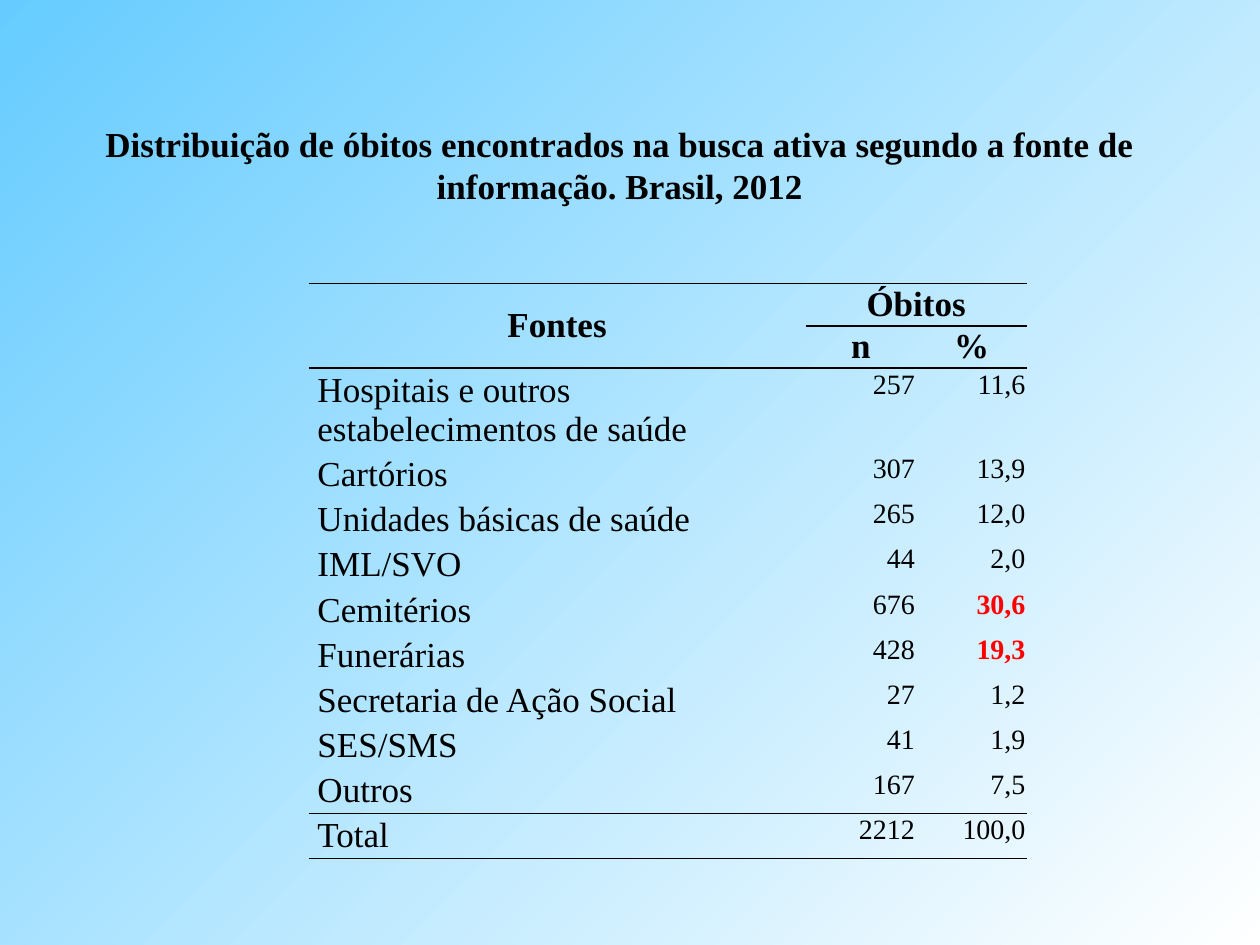
from lxml import etree
from pptx import Presentation
from pptx.dml.color import RGBColor
from pptx.enum.text import MSO_ANCHOR, PP_ALIGN
from pptx.oxml.ns import qn
from pptx.util import Cm, Pt

COLORS = {"sky": "66CCFF", "white": "FFFFFF", "ink": "000000", "highlight": "FF0000"}
FONT = "Times New Roman"
SOURCES = [
    ("Hospitais e outros estabelecimentos de saúde", "257", "11,6"),
    ("Cartórios", "307", "13,9"),
    ("Unidades básicas de saúde", "265", "12,0"),
    ("IML/SVO", "44", "2,0"),
    ("Cemitérios", "676", "30,6"),
    ("Funerárias", "428", "19,3"),
    ("Secretaria de Ação Social", "27", "1,2"),
    ("SES/SMS", "41", "1,9"),
    ("Outros", "167", "7,5"),
    ("Total", "2212", "100,0"),
]
HIGHLIGHTED = {"30,6", "19,3"}
ROWS = [("Fontes", "Óbitos", ""), ("", "n", "%")] + SOURCES
HEADER_ROWS = 2


def write(frame, text, size, align, bold=False, color="ink"):
    paragraph = frame.paragraphs[0]
    paragraph.alignment = align
    run = paragraph.add_run()
    run.text = text
    run.font.name = FONT
    run.font.size = Pt(size)
    run.font.bold = bold
    run.font.color.rgb = RGBColor.from_string(COLORS[color])


def set_borders(cell, ruled_sides):
    """Draw a 1 pt line on the given sides (of L, R, T, B) and clear the others."""
    properties = cell._tc.get_or_add_tcPr()
    for position, side in enumerate("LRTB"):
        line = etree.Element(qn(f"a:ln{side}"), w=str(Pt(1)))
        if side in ruled_sides:
            fill = etree.SubElement(line, qn("a:solidFill"))
            etree.SubElement(fill, qn("a:srgbClr"), val=COLORS["ink"])
        else:
            etree.SubElement(line, qn("a:noFill"))
        properties.insert(position, line)


prs = Presentation()
prs.slide_width, prs.slide_height = Cm(25.4), Cm(19.05)
slide = prs.slides.add_slide(prs.slide_layouts[6])

background = slide.background.fill
background.gradient()
background.gradient_angle = 315
for stop, name in zip(background.gradient_stops, ("sky", "white")):
    stop.color.rgb = RGBColor.from_string(COLORS[name])

title = slide.shapes.add_textbox(Cm(0.1), Cm(2.34), Cm(24.79), Cm(1.96)).text_frame
title.word_wrap = True
write(title, "Distribuição de óbitos encontrados na busca ativa segundo a fonte de "
      "informação. Brasil, 2012", 20, PP_ALIGN.CENTER, bold=True)

deaths = slide.shapes.add_table(
    len(ROWS), 3, Cm(6.22), Cm(5.72), Cm(14.48), Cm(11.6)).table
deaths.first_row = deaths.horz_banding = False
for column, width in zip(deaths.columns, (10.02, 2.23, 2.23)):
    column.width = Cm(width)
heights = [0.85, 0.85, 1.69] + [0.91] * (len(SOURCES) - 1)
for row, height in zip(deaths.rows, heights):
    row.height = Cm(height)
deaths.cell(0, 0).merge(deaths.cell(1, 0))
deaths.cell(0, 1).merge(deaths.cell(0, 2))

total_row = len(ROWS) - 1
for r, texts in enumerate(ROWS):
    for c, text in enumerate(texts):
        cell = deaths.cell(r, c)
        cell.fill.background()
        # Lines run above these rows; the one under "Óbitos" skips the first column
        ruled_rows = {0, HEADER_ROWS, total_row, len(ROWS)} | ({1} if c else set())
        set_borders(cell, [side for side, edge in (("T", r), ("B", r + 1))
                           if edge in ruled_rows])

        header = r < HEADER_ROWS
        figure = c > 0 and not header
        cell.margin_left = cell.margin_right = Cm(0.03 if figure else 0.18)
        cell.margin_top = Cm(0.03 if figure else 0)
        cell.margin_bottom = Cm(0)
        cell.vertical_anchor = MSO_ANCHOR.TOP if figure else MSO_ANCHOR.MIDDLE
        if not text:
            continue
        if header:
            write(cell.text_frame, text, 20, PP_ALIGN.CENTER, bold=True)
        elif figure:
            marked = text in HIGHLIGHTED
            write(cell.text_frame, text, 16, PP_ALIGN.RIGHT, bold=marked,
                  color="highlight" if marked else "ink")
        else:
            write(cell.text_frame, text, 20, PP_ALIGN.LEFT)

prs.save("out.pptx")
